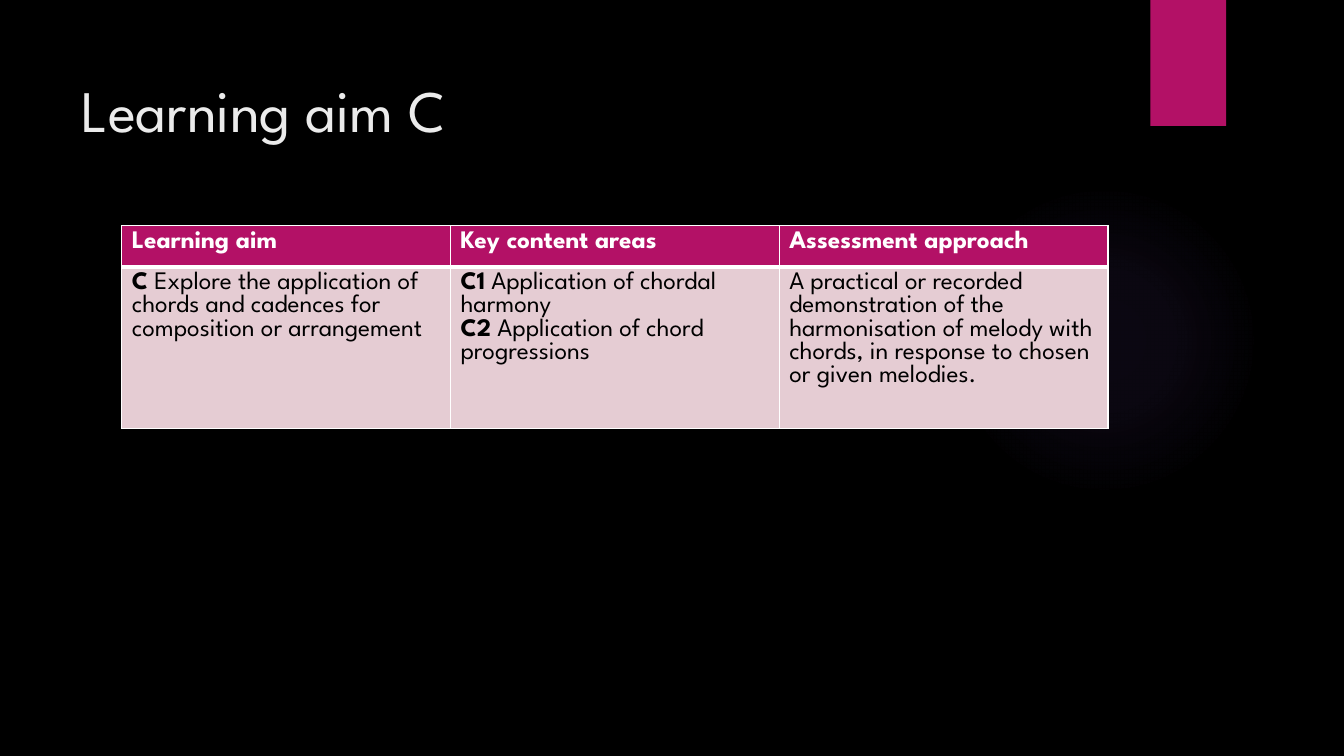
from lxml import etree
from pptx import Presentation
from pptx import util as u
from pptx.dml.color import RGBColor
from pptx.enum import shapes, text
from pptx.oxml import ns

FONT = "League Spartan"
BLACK, WHITE, PINK, ROSE, VIOLET = "000000", "FFFFFF", "B31166", "E5CCD3", "9B6BF2"
TITLE = "Learning aim C"
HEADERS = ["Learning aim", "Key content areas", "Assessment approach"]
DETAILS = [
    [("C", " Explore the application of"), ("", "chords and cadences for"),
     ("", "composition or arrangement")],
    [("C1", " Application of chordal"), ("", "harmony"),
     ("C2", " Application of chord"), ("", "progressions")],
    [("", "A practical or recorded"), ("", "demonstration of the"),
     ("", "harmonisation of melody with chords, in response to chosen or given melodies.")],
]
GLOW_STOPS = [(0, 7), (36, 6), (69, 0)]
TABLE_LEFT, TABLE_TOP, COLUMN_WIDTH = 87, 161.3, 234.8
ROW_HEIGHTS = [29.5, 90]


def colour(value):
    return RGBColor.from_string(value)


def write(paragraph, content, size=18, fill=BLACK, bold=False):
    run = paragraph.add_run()
    run.text = content
    run.font.name, run.font.size, run.font.bold = FONT, u.Pt(size), bold
    run.font.color.rgb = colour(fill)


def add_shape(slide, kind, left, top, width, height, fill):
    shape = slide.shapes.add_shape(kind, *map(u.Pt, (left, top, width, height)))
    shape.shadow.inherit = False
    shape.fill.solid()
    shape.fill.fore_color.rgb = colour(fill)
    shape.line.fill.background()
    return shape


def add_glow(shape, fill, stops):
    marks = "".join(
        f'<a:gs pos="{position * 1000}"><a:srgbClr val="{fill}">'
        f'<a:alpha val="{opacity * 1000}"/></a:srgbClr></a:gs>'
        for position, opacity in stops)
    gradient = etree.fromstring(
        f'<a:gradFill {ns.nsdecls("a")}><a:gsLst>{marks}</a:gsLst><a:path path="circle">'
        '<a:fillToRect l="50000" t="50000" r="50000" b="50000"/></a:path></a:gradFill>')
    properties = shape.element.spPr
    properties.replace(properties.find(ns.qn("a:solidFill")), gradient)


def format_cell(cell, fill, **borders):
    properties = cell._tc.get_or_add_tcPr()
    for side in "LRTB":
        properties.append(etree.fromstring(
            f'<a:ln{side} {ns.nsdecls("a")} w="{u.Pt(borders.get(side, 1))}"><a:solidFill>'
            f'<a:srgbClr val="{WHITE}"/></a:solidFill></a:ln{side}>'))
    cell.fill.solid()
    cell.fill.fore_color.rgb = colour(fill)


def add_title(slide):
    box = slide.shapes.add_textbox(u.Pt(51), u.Pt(36), u.Pt(741), u.Pt(110))
    frame = box.text_frame
    frame.word_wrap = True
    frame.vertical_anchor = text.MSO_ANCHOR.TOP
    frame.margin_top = u.Pt(16.8)
    write(frame.paragraphs[0], TITLE, size=42, fill="EBEBEB")


def add_aims_table(slide):
    table = slide.shapes.add_table(
        len(ROW_HEIGHTS), len(HEADERS), u.Pt(TABLE_LEFT), u.Pt(TABLE_TOP),
        u.Pt(COLUMN_WIDTH * len(HEADERS)), u.Pt(sum(ROW_HEIGHTS))).table
    for row, height in zip(table.rows, ROW_HEIGHTS):
        row.height = u.Pt(height)
    for index, (header, lines) in enumerate(zip(HEADERS, DETAILS)):
        table.columns[index].width = u.Pt(COLUMN_WIDTH)
        heading, detail = table.cell(0, index), table.cell(1, index)
        format_cell(heading, PINK, B=3)
        format_cell(detail, ROSE, T=3)
        write(heading.text_frame.paragraphs[0], header, fill=WHITE, bold=True)
        frame = detail.text_frame
        for number, (code, wording) in enumerate(lines):
            paragraph = frame.add_paragraph() if number else frame.paragraphs[0]
            if code:
                write(paragraph, code, bold=True)
            write(paragraph, wording)


def main():
    presentation = Presentation()
    presentation.slide_width, presentation.slide_height = u.Pt(960), u.Pt(540)
    slide = presentation.slides.add_slide(presentation.slide_layouts[6])
    slide.background.fill.solid()
    slide.background.fill.fore_color.rgb = colour(BLACK)
    glow = add_shape(slide, shapes.MSO_SHAPE.OVAL, 677.5, 131.8, 221.8, 221.8, VIOLET)
    add_glow(glow, VIOLET, GLOW_STOPS)
    add_shape(slide, shapes.MSO_SHAPE.RECTANGLE, 821.8, 0, 54, 90, PINK)
    add_title(slide)
    add_aims_table(slide)
    presentation.save("out.pptx")


if __name__ == "__main__":
    main()
